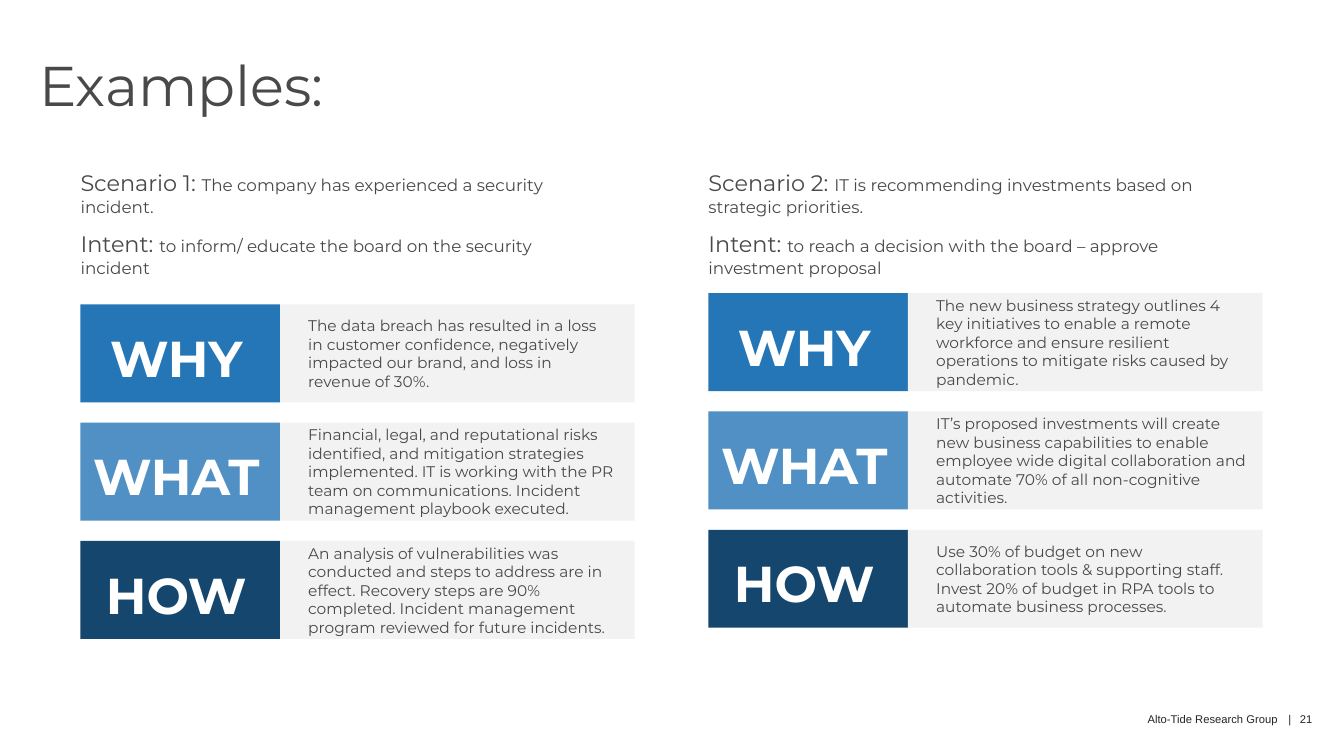
from pptx import Presentation
from pptx.dml.color import RGBColor
from pptx.enum.shapes import MSO_SHAPE
from pptx.enum.text import MSO_ANCHOR, MSO_AUTO_SIZE, PP_ALIGN
from pptx.oxml.ns import qn
from pptx.util import Cm, Pt
from lxml.etree import SubElement

TITLE = "Examples:"
FOOTER = "Alto-Tide Research Group\t|\t21"
CASES = [
    {
        "left": 2.03, "top": 7.67,
        "intro": [
            ("Scenario 1: ", "The company has experienced a security incident."),
            ("Intent: ", "to inform/ educate the board on the security incident"),
        ],
        "notes": [
            "The data breach has resulted in a loss in customer confidence, negatively "
            "impacted our brand, and loss in revenue of 30%.",
            "Financial, legal, and reputational risks identified, and mitigation strategies "
            "implemented. IT is working with the PR team on communications. Incident "
            "management playbook executed.",
            "An analysis of vulnerabilities was conducted and steps to address are in effect. "
            "Recovery steps are 90% completed. Incident management program reviewed for "
            "future incidents.",
        ],
    },
    {
        "left": 17.86, "top": 7.39,
        "intro": [
            ("Scenario 2: ", "IT is recommending investments based on strategic priorities."),
            ("Intent: ", "to reach a decision with the board – approve investment proposal"),
        ],
        "notes": [
            "The new business strategy outlines 4 key initiatives to enable a remote workforce "
            "and ensure resilient operations to mitigate risks caused by pandemic.",
            "IT’s proposed investments will create new business capabilities to enable "
            "employee wide digital collaboration and automate 70% of all non-cognitive "
            "activities.",
            "Use 30% of budget on new collaboration tools & supporting staff.\n"
            "Invest 20% of budget in RPA tools to automate business processes.",
        ],
    },
]

WHITE = RGBColor(0xFF, 0xFF, 0xFF)
GREY = RGBColor(0x49, 0x49, 0x49)
DARK = RGBColor(0x24, 0x24, 0x24)
PALE = RGBColor(0xF2, 0xF2, 0xF2)
BLUE = RGBColor(0x25, 0x76, 0xB7)
SKY = RGBColor(0x50, 0x90, 0xC4)
NAVY = RGBColor(0x15, 0x46, 0x6D)
ROWS = [("WHY", BLUE, 0.53), ("WHAT", SKY, 0.25), ("HOW", NAVY, 0.53)]
FONT = "Montserrat"
TAG_W, NOTE_W, ROW_H, STEP = 5.03, 8.94, 2.47, 2.98


def place(shape, left, top, width, height):
    shape.left, shape.top = Cm(left), Cm(top)
    shape.width, shape.height = Cm(width), Cm(height)


def set_frame(frame, anchor, left=0, top=0, right=0):
    frame.word_wrap = True
    frame.auto_size = MSO_AUTO_SIZE.NONE
    frame.vertical_anchor = anchor
    frame.margin_left, frame.margin_top = Cm(left), Cm(top)
    frame.margin_right, frame.margin_bottom = Cm(right), Cm(0)


def style(run, size, color, bold=False, name=FONT):
    font = run.font
    font.name, font.size, font.bold = name, Pt(size), bold
    font.color.rgb = color


def add_box(slide, area, fill, text, inset, align, size, color, bold=False):
    left, top, width, height = map(Cm, area)
    box = slide.shapes.add_shape(MSO_SHAPE.RECTANGLE, left, top, width, height)
    box.shadow.inherit = False
    box.fill.solid()
    box.fill.fore_color.rgb = fill
    box.line.fill.background()
    frame = box.text_frame
    frame.text = text
    set_frame(frame, MSO_ANCHOR.MIDDLE, *inset)
    for para in frame.paragraphs:
        para.alignment = align
        style(para.runs[0], size, color, bold)


def add_title(slide):
    title = slide.shapes.title
    place(title, 0.99, 1.47, 15.04, 3.15)
    title.text_frame.text = TITLE
    set_frame(title.text_frame, MSO_ANCHOR.TOP)
    para = title.text_frame.paragraphs[0]
    para.alignment, para.line_spacing = PP_ALIGN.LEFT, 0.9
    style(para.runs[0], 40, GREY)


def add_intro(body, case):
    place(body, case["left"], 4.27, 12.93, 2.9)
    frame = body.text_frame
    set_frame(frame, MSO_ANCHOR.TOP)
    for index, (head, text) in enumerate(case["intro"]):
        para = frame.add_paragraph() if index else frame.paragraphs[0]
        props = para._p.get_or_add_pPr()
        props.set("marL", "0")
        props.set("indent", "0")
        SubElement(props, qn("a:buNone"))
        para.space_before = Pt(10 if index else 0)
        for part, size in ((head, 16), (text, 12)):
            run = para.add_run()
            run.text = part
            style(run, size, GREY)


def add_rows(slide, case):
    for index, ((tag, fill, right), note) in enumerate(zip(ROWS, case["notes"])):
        left, top = case["left"], case["top"] + index * STEP
        add_box(slide, (left, top, TAG_W, ROW_H), fill, tag,
                (0, 0.2, 0.2), PP_ALIGN.CENTER, 36, WHITE, True)
        add_box(slide, (left + TAG_W, top, NOTE_W, ROW_H), PALE, note,
                (0.71, 0, right), PP_ALIGN.LEFT, 11, GREY)


def add_footer(slide):
    box = slide.shapes.add_textbox(Cm(28.93), Cm(17.95), Cm(4.6), Cm(0.35))
    box.text_frame.text = FOOTER
    set_frame(box.text_frame, MSO_ANCHOR.TOP)
    para = box.text_frame.paragraphs[0]
    tabs = SubElement(para._p.get_or_add_pPr(), qn("a:tabLst"))
    for stop in (3.55, 3.84):
        SubElement(tabs, qn("a:tab"), pos=str(Cm(stop)), algn="l")
    style(para.runs[0], 8, DARK, name="Arial")


def main():
    deck = Presentation()
    deck.slide_width, deck.slide_height = Cm(33.88), Cm(19.05)
    slide = deck.slides.add_slide(deck.slide_layouts[3])
    add_title(slide)
    for index, case in enumerate(CASES, 1):
        add_intro(slide.placeholders[index], case)
        add_rows(slide, case)
    add_footer(slide)
    deck.save("out.pptx")


if __name__ == "__main__":
    main()
